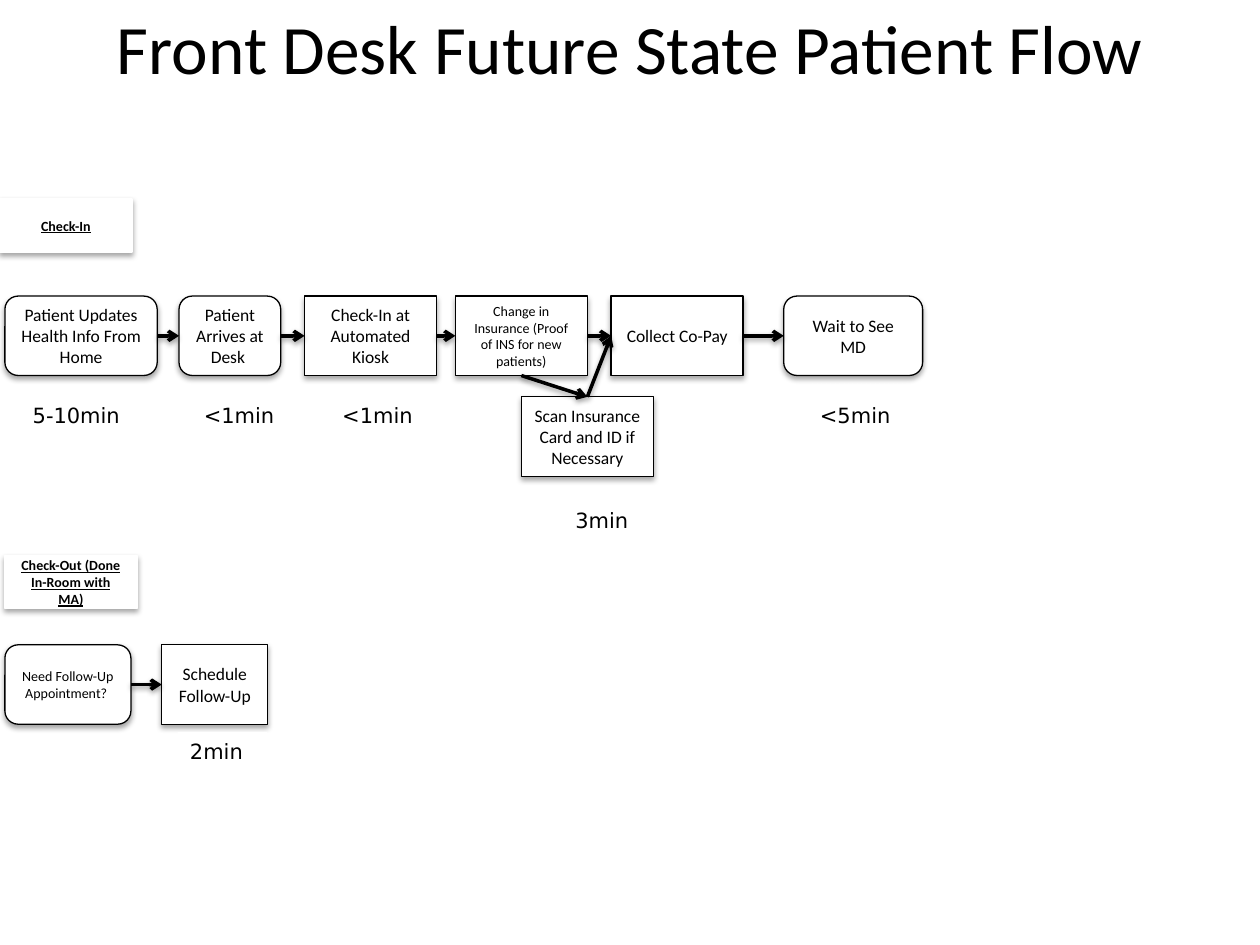
from lxml import etree
from pptx import Presentation
from pptx.dml.color import RGBColor
from pptx.enum.shapes import MSO_CONNECTOR, MSO_SHAPE
from pptx.enum.text import MSO_ANCHOR, MSO_AUTO_SIZE, PP_ALIGN
from pptx.oxml.ns import qn
from pptx.util import Cm, Pt

ROUNDED = MSO_SHAPE.FLOWCHART_ALTERNATE_PROCESS
PROCESS = MSO_SHAPE.FLOWCHART_PROCESS
RECTANGLE = MSO_SHAPE.RECTANGLE
STRAIGHT = MSO_CONNECTOR.STRAIGHT
CENTER, LEFT = PP_ALIGN.CENTER, PP_ALIGN.LEFT
MIDDLE, TOP = MSO_ANCHOR.MIDDLE, MSO_ANCHOR.TOP
NO_FIT = MSO_AUTO_SIZE.NONE

FONT, TIME_FONT = "Calibri", "DejaVu Sans"
BLACK, WHITE = "000000", "FFFFFF"
SITE_TOP, SITE_LEFT, SITE_BOTTOM, SITE_RIGHT = range(4)
STEP_W, STEP_H = 2.66, 1.6
LABEL_H, TIME_H = 1.07, 0.76


def rgb(color):
    return RGBColor.from_string(color)


def add_drop_shadow(effects, distance, opacity):
    shadow = etree.SubElement(effects, qn("a:outerShdw"), blurRad="40000",
                              dist=str(distance), dir="5400000", rotWithShape="0")
    color = etree.SubElement(shadow, qn("a:srgbClr"), val=BLACK)
    etree.SubElement(color, qn("a:alpha"), val=str(opacity * 1000))


def write_text(sp, text, size, font=FONT, align=CENTER, anchor=MIDDLE, heading=False):
    tf = sp.text_frame
    tf.word_wrap = True
    tf.auto_size = NO_FIT
    tf.vertical_anchor = anchor
    p = tf.paragraphs[0]
    p.alignment = align
    r = p.add_run()
    r.text = text
    r.font.name, r.font.size = font, Pt(size)
    r.font.color.rgb = rgb(BLACK)
    if heading:
        r.font.bold = r.font.underline = True


def add_box(s, kind, x, y, w, h, line=None):
    sp = s.shapes.add_shape(kind, Cm(x), Cm(y), Cm(w), Cm(h))
    sp.fill.solid()
    sp.fill.fore_color.rgb = rgb(WHITE)
    sp.shadow.inherit = False
    if line:
        sp.line.color.rgb = rgb(line)
        sp.line.width = Pt(0.75)
        add_drop_shadow(sp._element.spPr.find(qn("a:effectLst")), 23000, 35)
    else:
        sp.line.fill.background()
    return sp


def add_label(s, x, y, text):
    sp = add_box(s, PROCESS, x, y, STEP_W, LABEL_H, WHITE)
    write_text(sp, text, 8, heading=True)


def add_step(s, kind, x, y, w, text, size=10):
    sp = add_box(s, kind, x, y, w, STEP_H, BLACK)
    write_text(sp, text, size)
    return sp


def add_time(s, x, y, w, text):
    sp = add_box(s, RECTANGLE, x, y, w, TIME_H)
    write_text(sp, text, 12, TIME_FONT, LEFT, TOP)


def add_arrow(s, start, end, start_site=SITE_RIGHT, end_site=SITE_LEFT):
    arrow = s.shapes.add_connector(STRAIGHT, 0, 0, 0, 0)
    arrow.begin_connect(start, start_site)
    arrow.end_connect(end, end_site)
    arrow.line.color.rgb = rgb(BLACK)
    arrow.line.width = Pt(2)
    etree.SubElement(arrow.line._get_or_add_ln(), qn("a:tailEnd"), type="arrow")
    effects = etree.SubElement(arrow._element.spPr, qn("a:effectLst"))
    add_drop_shadow(effects, 20000, 38)


def add_title(s, x, y, w, h):
    title = s.shapes.title
    title.left, title.top, title.width, title.height = Cm(x), Cm(y), Cm(w), Cm(h)
    write_text(title, "Front Desk Future State Patient Flow", 39.6)


def add_check_in(s, x, y):
    add_label(s, x, y, "Check-In")

    # Times below the steps
    for dx, dy, w, text in [
        (0.41, 3.99, 2.64, "5-10min"),
        (3.86, 3.99, 2.49, "<1min"),
        (6.65, 3.99, 2.44, "<1min"),
        (16.28, 3.99, 2.34, "<5min"),
        (11.35, 6.1, 1.8, "3min"),
    ]:
        add_time(s, x + dx, y + dy, w, text)

    # Main row of steps
    steps = [add_step(s, kind, x + dx, y + 1.96, w, text, size)
             for kind, dx, w, text, size in [
        (ROUNDED, 0.1, 3.07, "Patient Updates Health Info From Home", 10),
        (ROUNDED, 3.61, 2.05, "Patient Arrives at Desk ", 10),
        (PROCESS, 6.14, STEP_W, "Check-In at Automated Kiosk", 10),
        (PROCESS, 9.18, STEP_W, "Change in Insurance (Proof of INS for new patients)", 8),
        (PROCESS, 12.32, STEP_W, "Collect Co-Pay", 10),
        (ROUNDED, 15.8, 2.8, "Wait to See MD", 10),
    ]]
    for start, end in zip(steps, steps[1:]):
        add_arrow(s, start, end)

    # Detour for the insurance card
    scan = add_step(s, PROCESS, x + 10.51, y + 3.99, STEP_W,
                    "Scan Insurance Card and ID if Necessary")
    change, collect = steps[3:5]
    add_arrow(s, change, scan, SITE_BOTTOM, SITE_TOP)
    add_arrow(s, scan, collect, SITE_TOP, SITE_LEFT)


def add_check_out(s, x, y):
    add_label(s, x, y, "Check-Out (Done In-Room with MA)")
    need = add_step(s, ROUNDED, x, y + 1.8, 2.54, "Need Follow-Up Appointment? ", 8)
    schedule = add_step(s, PROCESS, x + 3.16, y + 1.8, 2.14, "Schedule Follow-Up")
    add_arrow(s, need, schedule)
    add_time(s, x + 3.48, y + 3.56, 1.8, "2min")


def main():
    prs = Presentation()
    prs.slide_width, prs.slide_height = Cm(25.4), Cm(19.05)
    s = prs.slides.add_slide(prs.slide_layouts[5])
    add_title(s, 0, 0, 25.4, 1.9)
    add_check_in(s, 0, 4.01)
    add_check_out(s, 0.1, 11.2)
    prs.save("out.pptx")


if __name__ == "__main__":
    main()
